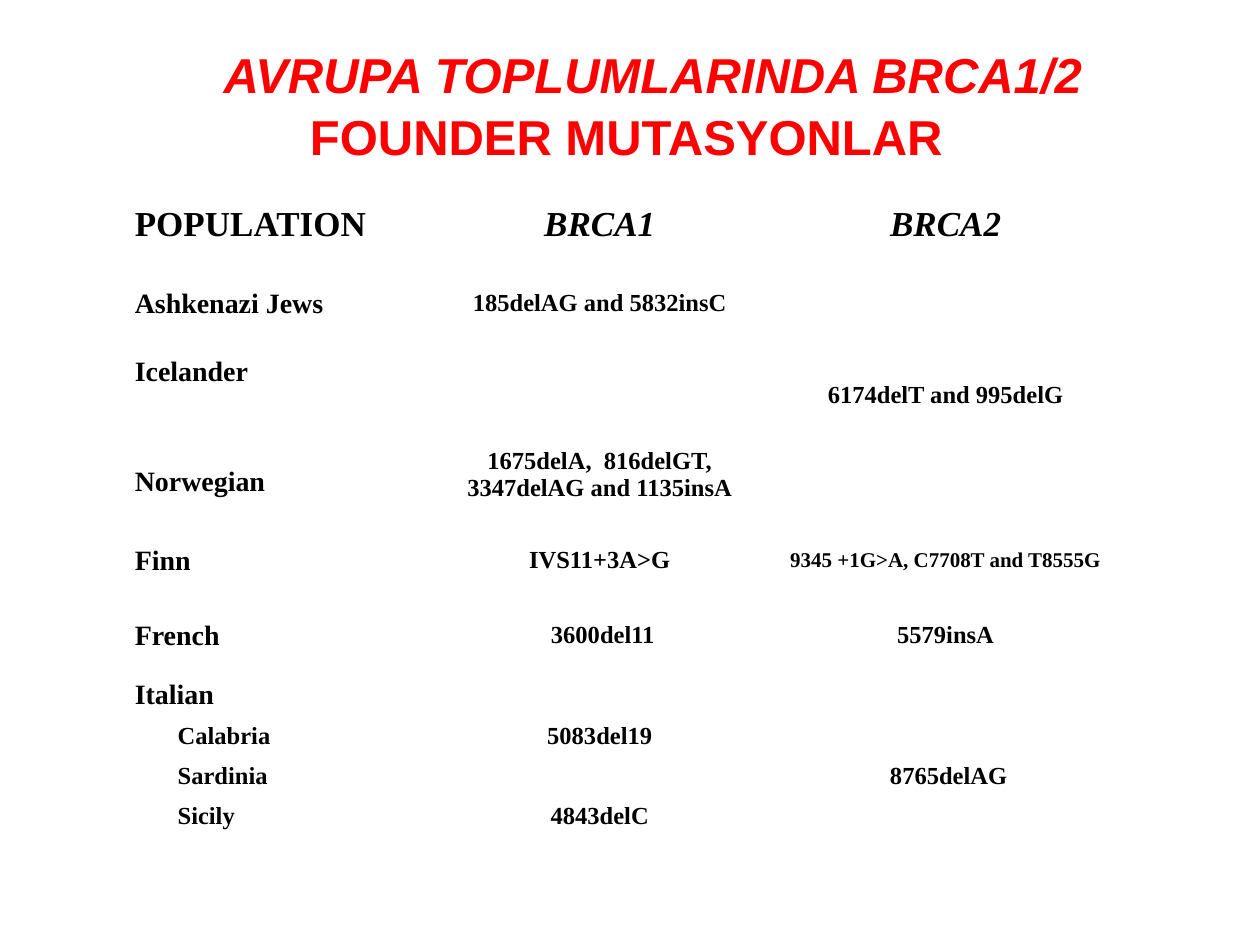
"""Builds a slide listing BRCA1/2 founder mutations in European populations."""
from lxml.etree import SubElement
from pptx import Presentation
from pptx.dml.color import RGBColor
from pptx.enum.text import MSO_ANCHOR, PP_ALIGN
from pptx.oxml.ns import qn
from pptx.util import Inches, Pt

RED = RGBColor(0xFF, 0x00, 0x00)
BLACK = RGBColor(0x00, 0x00, 0x00)
WHITE = RGBColor(0xFF, 0xFF, 0xFF)

TITLE = [("AVRUPA TOPLUMLARINDA BRCA1/2 ", True), ("FOUNDER MUTASYONLAR", False)]
COLUMN_WIDTHS = [2.4, 2.78, 2.71]
ROWS = [
    (0.52, ["POPULATION", "BRCA1", "BRCA2"]),
    (0.74, ["Ashkenazi Jews", "185delAG and 5832insC", ""]),
    (0.72, ["Icelander", "", "6174delT and 995delG"]),
    (0.65, ["Norwegian", "1675delA,  816delGT,\n3347delAG and 1135insA", ""]),
    (0.6, ["Finn", "IVS11+3A>G", "9345 +1G>A, C7708T and T8555G"]),
    (0.59, ["French", " 3600del11", "5579insA"]),
    (0.35, ["Italian", "", ""]),
    (0.31, ["Calabria", "5083del19", ""]),
    (0.31, ["Sardinia", "", " 8765delAG"]),
    (0.31, ["Sicily", "4843delC", ""]),
]
ITALIAN_ROW = 6
LAST_ROW = len(ROWS) - 1
TOP_CELLS = {(2, 0), (3, 1)}
SMALL_CELL = (4, 2)


def font_size(row, column):
    if row == 0:
        return Pt(20)
    if (row, column) == SMALL_CELL:
        return Pt(12)
    return Pt(16) if column == 0 and row <= ITALIAN_ROW else Pt(14)


def add_borders(cell, row):
    sides = ["lnL", "lnR"]
    if row <= ITALIAN_ROW:
        sides.append("lnT")
    if row < ITALIAN_ROW or row == LAST_ROW:
        sides.append("lnB")
    properties = cell._tc.get_or_add_tcPr()
    for side in sides:
        line = SubElement(properties, qn(f"a:{side}"), w=str(Pt(2.25)))
        fill = SubElement(line, qn("a:solidFill"))
        SubElement(fill, qn("a:srgbClr"), val=str(WHITE))


def fill_cell(cell, row, column, text):
    add_borders(cell, row)
    cell.fill.background()
    at_top = row >= ITALIAN_ROW or (row, column) in TOP_CELLS
    cell.vertical_anchor = MSO_ANCHOR.TOP if at_top else MSO_ANCHOR.MIDDLE
    if column == 0 and row > ITALIAN_ROW:
        cell.margin_left = Inches(0.44)
    cell.text = text
    for para in cell.text_frame.paragraphs:
        para.alignment = PP_ALIGN.CENTER if column else PP_ALIGN.LEFT
        font = para.font
        font.name, font.size = "Times New Roman", font_size(row, column)
        font.bold, font.italic = True, row == 0 and column > 0
        font.color.rgb = BLACK
        if not text:
            ending = para._p.get_or_add_endParaRPr()
            ending.set("sz", str(int(font.size.pt * 100)))


def add_mutation_table(page):
    heights = [height for height, _ in ROWS]
    frame = page.shapes.add_table(
        len(ROWS), len(COLUMN_WIDTHS), Inches(0.97), Inches(1.52),
        Inches(sum(COLUMN_WIDTHS)), Inches(sum(heights)))
    table = frame.table
    table.first_row = table.horz_banding = False
    for column, width in enumerate(COLUMN_WIDTHS):
        table.columns[column].width = Inches(width)
    for row, (height, texts) in enumerate(ROWS):
        table.rows[row].height = Inches(height)
        for column, text in enumerate(texts):
            fill_cell(table.cell(row, column), row, column, text)


def add_title(page):
    box = page.shapes.add_textbox(Inches(0.26), Inches(0.28), Inches(9.42), Inches(1.04))
    box.text_frame.word_wrap = True
    para = box.text_frame.paragraphs[0]
    para.alignment = PP_ALIGN.CENTER
    para.line_spacing = 1.05
    para._p.get_or_add_pPr().set("indent", str(Inches(0.42)))
    para.font.name, para.font.size, para.font.bold = "Arial", Pt(28), True
    para.font.color.rgb = RED
    for text, italic in TITLE:
        span = para.add_run()
        span.text = text
        span.font.italic = italic


def main():
    deck = Presentation()
    deck.slide_width, deck.slide_height = Inches(10), Inches(7.5)
    page = deck.slides.add_slide(deck.slide_layouts[6])
    add_mutation_table(page)
    add_title(page)
    deck.save("out.pptx")


if __name__ == "__main__":
    main()
